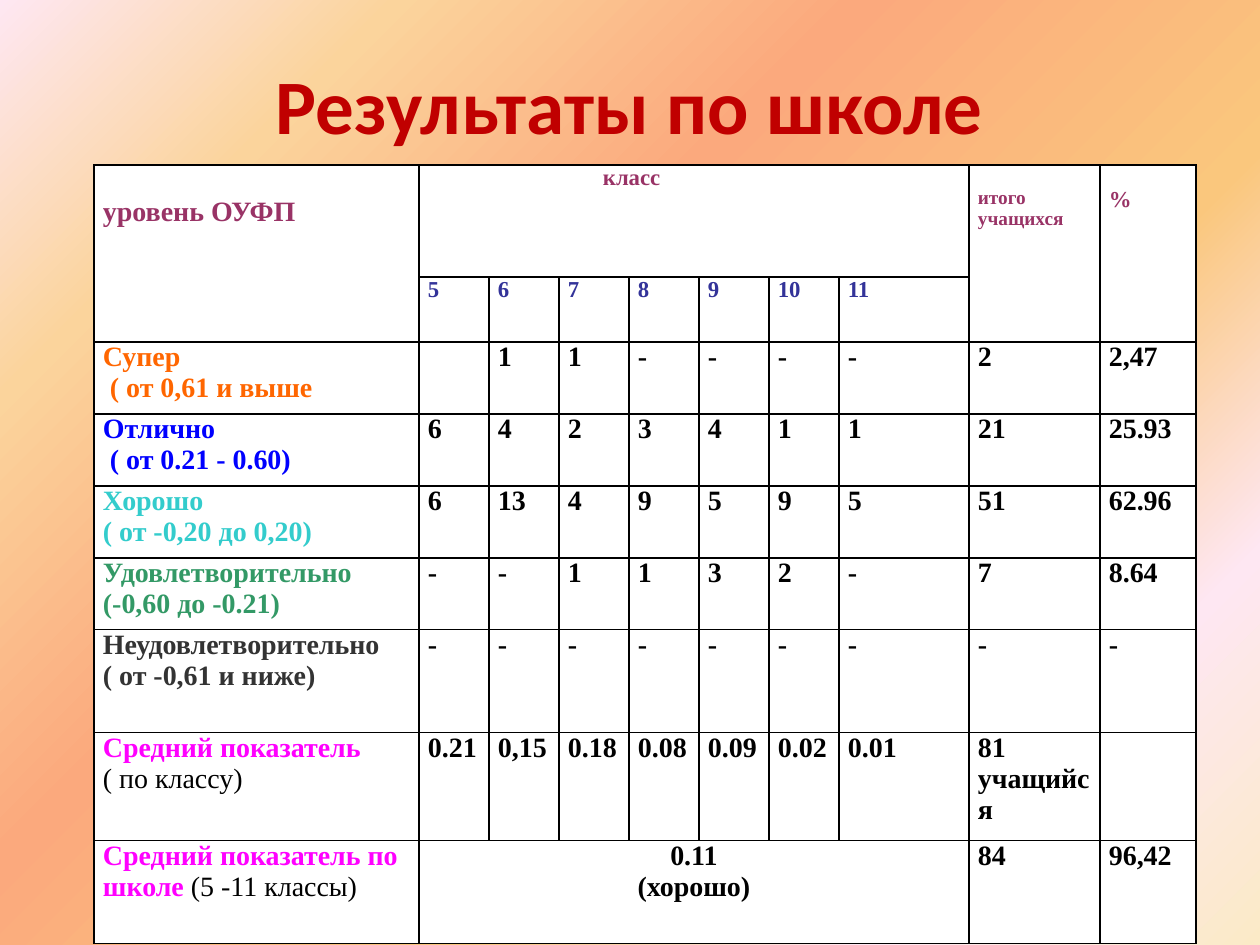
from dataclasses import dataclass

from lxml.etree import SubElement
from pptx import Presentation
from pptx.dml.color import RGBColor
from pptx.enum.text import MSO_ANCHOR as Anchor, PP_ALIGN as Align
from pptx.oxml.ns import qn
from pptx.util import Pt

EMU_PER_PX = 914400 / 126
COLORS = {
    "title": "C00000", "heading": "993366", "grade": "333399",
    "super": "FF6600", "excellent": "0000FF", "good": "33CCCC",
    "fair": "339966", "poor": "333333", "average": "FF00FF",
    "text": "000000", "cell": "FFFFFF",
}
BACKGROUND_STOPS = [(0, "FBEAC7"), (18, "FEE7F2"), (36, "FAC77D"),
                    (61, "FBA97D"), (82, "FBD49C"), (100, "FEE7F2")]
COLUMN_WIDTHS = [325] + [70] * 6 + [130, 131, 96]
ROW_HEIGHTS = [112, 62] + [72] * 4 + [103, 108, 103]
SERIF = "Times New Roman"


@dataclass
class Span:
    text: str
    color: str = "text"
    bold: bool = True


@dataclass
class Level:
    """A table row: label lines, each a list of spans, and its values."""
    label: list[list[Span]]
    values: list[str]


def level(color: str, name: str, limits: str, values: str) -> Level:
    return Level([[Span(name, color)], [Span(limits, color)]], values.split())


LEVELS = [
    level("super", "Супер", " ( от 0,61 и выше", "1 1 - - - - 2 2,47"),
    level("excellent", "Отлично", " ( от 0.21 - 0.60)", "6 4 2 3 4 1 1 21 25.93"),
    level("good", "Хорошо", "( от -0,20 до 0,20)", "6 13 4 9 5 9 5 51 62.96"),
    level("fair", "Удовлетворительно", "(-0,60 до -0.21)", "- - 1 1 3 2 - 7 8.64"),
    level("poor", "Неудовлетворительно", "( от -0,61 и ниже)", "- - - - - - - - -"),
    Level([[Span("Средний показатель", "average")],
           [Span("( по классу)", bold=False)]],
          ["0.21", "0,15", "0.18", "0.08", "0.09", "0.02", "0.01", "81\nучащийся", ""]),
]
LEVELS[0].values.insert(0, "")  # nobody in grade 5 reached the top level
SCHOOL_LABEL = [[Span("Средний показатель по", "average")],
                [Span("школе ", "average"), Span("(5 -11 классы)", bold=False)]]


def px(length: int) -> int:
    return round(length * EMU_PER_PX)


def rgb(name: str) -> RGBColor:
    return RGBColor.from_string(COLORS[name])


def lines_of(text: str, color: str = "text") -> list[list[Span]]:
    return [[Span(line, color)] for line in text.split("\n")]


def write(frame, lines: list[list[Span]], *, size: int = 16,
          font: str = SERIF, align=Align.LEFT) -> None:
    for index, spans in enumerate(lines):
        para = frame.add_paragraph() if index else frame.paragraphs[0]
        para.alignment = align
        for span in spans:
            run = para.add_run()
            run.text = span.text
            run.font.name = font
            run.font.size = Pt(size)
            run.font.bold = span.bold
            run.font.color.rgb = rgb(span.color)


def style_cell(cell) -> None:
    cell.margin_left = cell.margin_right = px(9)
    cell.margin_top = cell.margin_bottom = 0
    properties = cell._tc.get_or_add_tcPr()
    for side in ("a:lnL", "a:lnR", "a:lnT", "a:lnB"):
        line = SubElement(properties, qn(side), w=str(Pt(1)))
        SubElement(SubElement(line, qn("a:solidFill")), qn("a:srgbClr"),
                   val=COLORS["text"])
    cell.fill.solid()
    cell.fill.fore_color.rgb = rgb("cell")


def paint_background(page) -> None:
    fill = page.background.fill
    fill.gradient()
    fill.gradient_angle = 135
    stops = page._element.find(".//" + qn("a:gsLst"))
    for stop in list(stops):
        stops.remove(stop)
    for percent, color in BACKGROUND_STOPS:
        stop = SubElement(stops, qn("a:gs"), pos=str(percent * 1000))
        SubElement(stop, qn("a:srgbClr"), val=color)


def add_title(page) -> None:
    title = page.shapes.title
    title.left, title.top, title.width, title.height = map(px, (94, 45, 1071, 118))
    title.text_frame.vertical_anchor = Anchor.MIDDLE
    write(title.text_frame, lines_of("Результаты по школе", "title"),
          size=44, font="Calibri", align=Align.CENTER)


def add_grid(page):
    frame = page.shapes.add_table(
        len(ROW_HEIGHTS), len(COLUMN_WIDTHS), px(94), px(165),
        px(sum(COLUMN_WIDTHS)), px(sum(ROW_HEIGHTS)))
    table = frame.table
    table.first_row = table.horz_banding = False
    for column, width in zip(table.columns, COLUMN_WIDTHS):
        column.width = px(width)
    for row, height in zip(table.rows, ROW_HEIGHTS):
        row.height = px(height)
    for cell in table.iter_cells():
        style_cell(cell)
    return table


def fill_header(table) -> None:
    for column, text, size, top in ((0, "уровень ОУФП", 16, 32),
                                    (8, "итого\nучащихся", 11, 22),
                                    (9, "%", 13, 22)):
        cell = table.cell(0, column)
        cell.merge(table.cell(1, column))
        cell.margin_top = px(top)
        write(cell.text_frame, lines_of(text, "heading"), size=size)
    grades = table.cell(0, 1)
    grades.merge(table.cell(0, 7))
    grades.margin_left = px(184)
    write(grades.text_frame, lines_of("класс", "heading"), size=13)
    for column, grade in enumerate(range(5, 12), start=1):
        write(table.cell(1, column).text_frame, lines_of(str(grade), "grade"), size=13)


def fill_body(table) -> None:
    for row, entry in enumerate(LEVELS, start=2):
        write(table.cell(row, 0).text_frame, entry.label)
        for column, value in enumerate(entry.values, start=1):
            if value:
                write(table.cell(row, column).text_frame, lines_of(value))
    last = len(ROW_HEIGHTS) - 1
    write(table.cell(last, 0).text_frame, SCHOOL_LABEL)
    average = table.cell(last, 1)
    average.merge(table.cell(last, 7))
    write(average.text_frame, lines_of("0.11\n(хорошо)"), align=Align.CENTER)
    for column, value in ((8, "84"), (9, "96,42")):
        write(table.cell(last, column).text_frame, lines_of(value))


def main() -> None:
    deck = Presentation()
    deck.slide_width, deck.slide_height = px(1260), px(945)
    page = deck.slides.add_slide(deck.slide_layouts[5])
    paint_background(page)
    add_title(page)
    table = add_grid(page)
    fill_header(table)
    fill_body(table)
    deck.save("out.pptx")


if __name__ == "__main__":
    main()
